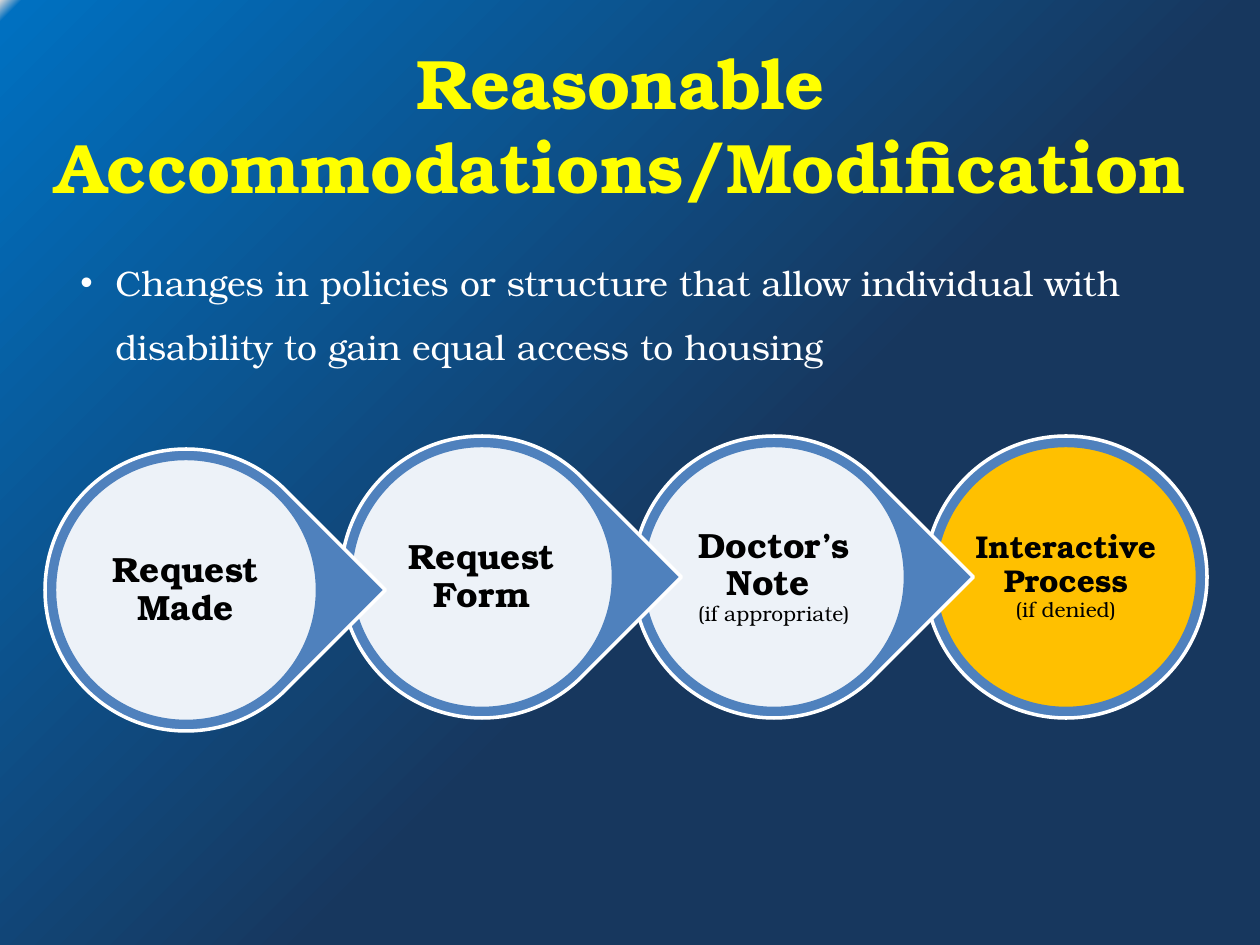
from copy import deepcopy
from pptx import Presentation, util as u
from pptx.dml.color import RGBColor
from pptx.enum import shapes, text
from pptx.oxml.ns import qn
from lxml import etree

FACE = "TeX Gyre Bonum"
BLUE, WHITE, GOLD = "4F81BD", "FFFFFF", "FFC000"
DROP, DISC, AREA = 282, 263, 189  # sizes of the nested parts of a step
KIND = shapes.MSO_SHAPE
MID = text.MSO_ANCHOR.MIDDLE
MARGINS = ("margin_left", "margin_top", "margin_right", "margin_bottom")

# left, top, fill of the disc, runs as (wording, size, bold)
STEPS = [
    (925, 436, GOLD, [("Interactive Process", 18, True), ("(if denied)", 12, False)]),
    (633, 436, WHITE, [("Doctor’s Note ", 20, True), ("(if appropriate)", 12, False)]),
    (341, 436, WHITE, [("Request Form", 20, True)]),
    (45, 449, WHITE, [("Request Made", 20, True)]),
]


def px(n):
    return u.Emu(round(n * 914400 / 126))


def tint(code):
    return RGBColor.from_string(code)


def put(item, **values):
    for name, value in values.items():
        setattr(item, name, value)


def paint(slide):
    """Diagonal gradient behind the slide."""
    fill = slide.background.fill
    fill.gradient()
    fill.gradient_angle = 135
    stops = slide.element.find(".//" + qn("a:gsLst"))
    stops.append(deepcopy(stops[-1]))
    shades = [(0.43, "17375E"), (0.99, "0070C0"), (1, "D9D9D9")]
    for stop, (place, code) in zip(fill.gradient_stops, shades):
        stop.position = place
        stop.color.rgb = tint(code)


def label(slide, box, runs, code, anchor=None, inset=None, **style):
    """Text box of one paragraph, with a line break between runs."""
    frame = slide.shapes.add_textbox(*map(px, box)).text_frame
    put(frame, word_wrap=True, vertical_anchor=anchor)
    if inset is not None:
        put(frame, **dict.fromkeys(MARGINS, px(inset)))
    para = frame.paragraphs[0]
    put(para, **style)
    for i, (words, size, bold) in enumerate(runs):
        if i:
            para.add_line_break()
        run = para.add_run()
        run.text = words
        put(run.font, name=FACE, size=u.Pt(size), bold=bold)
        run.font.color.rgb = tint(code)
    return para


def bullet(para, indent):
    props = para._p.get_or_add_pPr()
    props.set("marL", str(px(indent)))
    props.set("indent", str(-px(indent)))
    etree.SubElement(props, qn("a:buFont")).set("typeface", "Arial")
    etree.SubElement(props, qn("a:buChar")).set("char", "•")


def shape(slide, kind, left, top, size, fill, line):
    item = slide.shapes.add_shape(kind, *map(px, (left, top, size, size)))
    item.shadow.inherit = False
    item.fill.solid()
    item.fill.fore_color.rgb = tint(fill)
    item.line.color.rgb = tint(line)
    item.line.width = u.Pt(2)
    return item


def step(slide, left, top, fill, runs):
    """Outer drop, inner disc and wording; the last step has no point."""
    last = fill == GOLD
    kind = KIND.OVAL if last else KIND.TEAR
    drop = shape(slide, kind, left, top, DROP, BLUE, WHITE)
    gap = (DROP - DISC) / 2
    disc = shape(slide, KIND.OVAL, left + gap, top + gap, DISC, fill, BLUE)
    if not last:
        drop.rotation = 45
        drop.adjustments[0] = 1
        code = disc.fill._xPr.find(".//" + qn("a:srgbClr"))
        etree.SubElement(code, qn("a:alpha")).set("val", "90000")
    gap = (DROP - AREA) / 2
    label(slide, (left + gap, top + gap, AREA, AREA), runs, "000000", MID, 4,
          alignment=text.PP_ALIGN.CENTER, line_spacing=0.9)


def main():
    deck = Presentation()
    put(deck, slide_width=px(1260), slide_height=px(945))
    slide = deck.slides.add_slide(deck.slide_layouts[6])
    paint(slide)

    # Title and definition
    label(slide, (40, 32, 1162, 183),
          [("Reasonable Accommodations/Modification", 40, True)],
          "FFFF00", MID, alignment=text.PP_ALIGN.CENTER)
    para = label(slide, (68, 234, 1086, 184),
                 [("Changes in policies or structure that allow individual "
                   "with disability to gain equal access to housing", 20.2, False)],
                 WHITE, line_spacing=1.5)
    bullet(para, 35)

    # Process chain, from the last step so each point lies on top
    for spot in STEPS:
        step(slide, *spot)
    deck.save("out.pptx")


if __name__ == "__main__":
    main()
